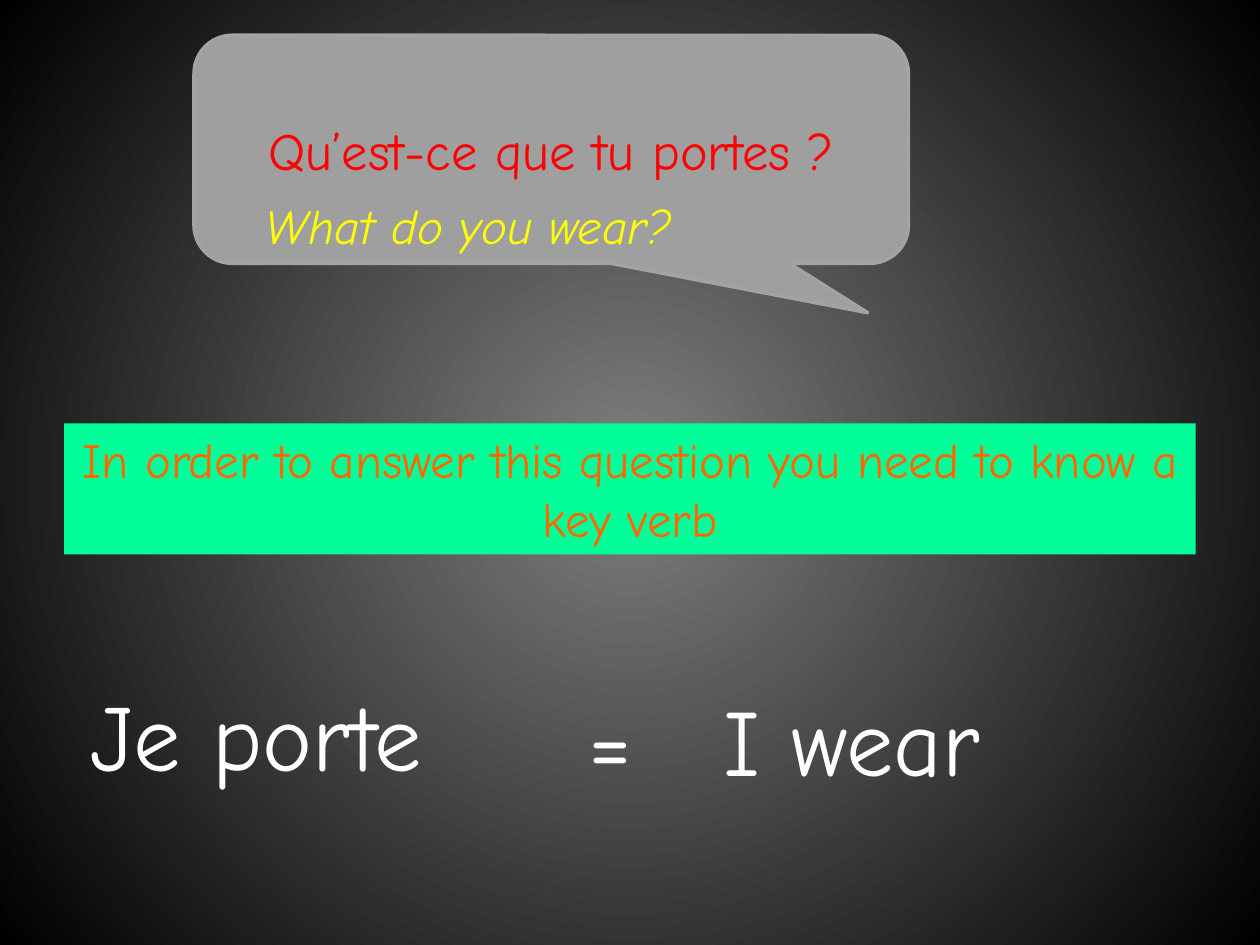
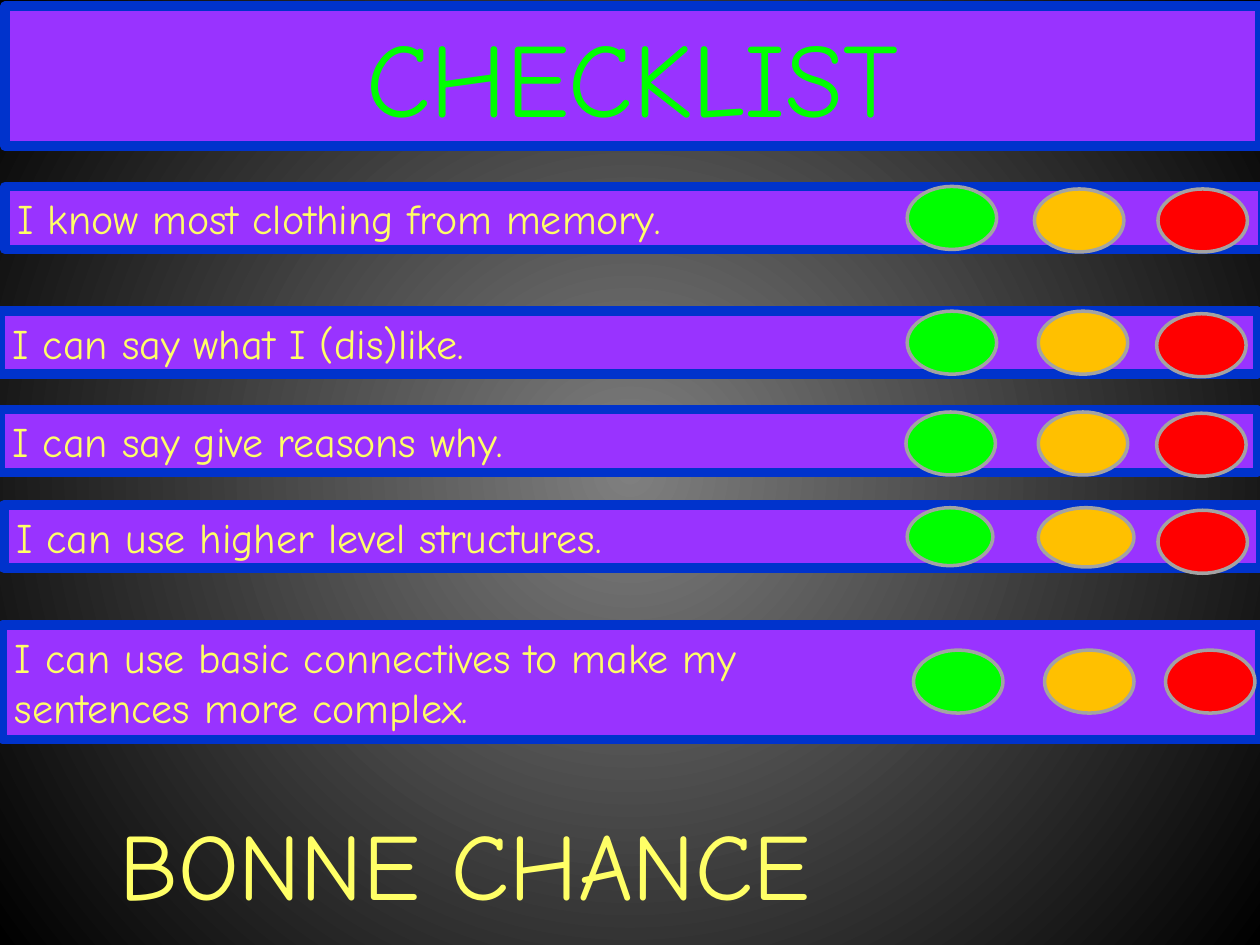
import pptx
import pptx.util
import pptx.dml.color
import pptx.enum.shapes
import pptx.enum.text
import pptx.oxml
import pptx.oxml.ns
from lxml import etree

RGB = pptx.dml.color.RGBColor
Inches = pptx.util.Inches
Pt = pptx.util.Pt
SHAPE = pptx.enum.shapes.MSO_SHAPE
ALIGN = pptx.enum.text.PP_ALIGN
ANCHOR = pptx.enum.text.MSO_ANCHOR
qn = pptx.oxml.ns.qn

FONT = "Comic Neue"
WHITE = RGB(0xFF, 0xFF, 0xFF)
BLACK = RGB(0x00, 0x00, 0x00)
GLOW = RGB(0x7F, 0x7F, 0x7F)
BUBBLE = RGB(0x9F, 0x9F, 0x9F)
OUTLINE = RGB(0xA3, 0xA3, 0xA3)
RED = RGB(0xFF, 0x00, 0x00)
AMBER = RGB(0xFF, 0xC0, 0x00)
GREEN = RGB(0x00, 0xFF, 0x00)
YELLOW = RGB(0xFF, 0xFF, 0x00)
CREAM = RGB(0xFF, 0xFF, 0x66)
ORANGE = RGB(0xFF, 0x66, 0x00)
MINT = RGB(0x00, 0xFF, 0x99)
PURPLE = RGB(0x99, 0x33, 0xFF)
BLUE = RGB(0x00, 0x33, 0xCC)

LAMP_COLORS = (GREEN, AMBER, RED)
LAMP_SIZE = (0.71, 0.5)

# Each row: box, text, lamps as (left, top[, width, height]) within the box
CHECKLIST = [
    ((0.04, 1.48, 9.98, 0.5), "I know most clothing from memory.",
     [(7.16, 0), (8.17, 0.02), (9.15, 0.02)]),
    ((0, 2.47, 9.98, 0.5), "I can say what I (dis)like.",
     [(7.2, 0), (8.24, 0), (9.18, 0.02)]),
    ((0, 3.25, 9.98, 0.5), "I can say give reasons why.",
     [(7.19, 0.02), (8.24, 0.02), (9.18, 0.03)]),
    ((0.03, 4.01, 9.98, 0.5), "I can use higher level structures.",
     [(7.17, 0.02, 0.68, 0.46), (8.21, 0.02, 0.76, 0.47), (9.16, 0.04)]),
    ((0.02, 4.96, 9.98, 0.91),
     "I can use basic connectives to make my\nsentences more complex.",
     [(7.23, 0.2), (8.27, 0.2), (9.23, 0.2)]),
]


def write(sp, text, size, color, align=ALIGN.LEFT, anchor=ANCHOR.TOP,
          italic=False, tab=None):
    """Fill a shape with text, one paragraph per line; tab is a stop in inches."""
    tf = sp.text_frame
    tf.word_wrap = True
    tf.vertical_anchor = anchor
    for i, line in enumerate(text.split("\n")):
        p = tf.add_paragraph() if i else tf.paragraphs[0]
        p.alignment = align
        if tab:
            stops = etree.SubElement(p._p.get_or_add_pPr(), qn("a:tabLst"))
            etree.SubElement(stops, qn("a:tab"), pos=str(Inches(tab)), algn="l")
        r = p.add_run()
        r.text = line
        r.font.name = FONT
        r.font.size = Pt(size)
        r.font.italic = italic
        r.font.color.rgb = color


def add_text(s, box, text, size, color, **fmt):
    sp = s.shapes.add_textbox(*map(Inches, box))
    write(sp, text, size, color, **fmt)


def add_shape(s, kind, box, fill, line=None, width=2):
    sp = s.shapes.add_shape(kind, *map(Inches, box))
    sp.shadow.inherit = False
    sp.fill.solid()
    sp.fill.fore_color.rgb = fill
    if line is None:
        sp.line.fill.background()
    else:
        sp.line.color.rgb = line
        sp.line.width = Pt(width)
    return sp


def add_slide(prs):
    """Add a blank slide with the grey glow fading to black from the centre."""
    s = prs.slides.add_slide(prs.slide_layouts[6])
    fill = s.background.fill
    fill.gradient()
    for stop, color, position in zip(fill.gradient_stops, (GLOW, BLACK), (0, 1)):
        stop.color.rgb = color
        stop.position = position
    grad = next(s.element.iter(qn("a:gradFill")))
    grad.remove(grad.find(qn("a:lin")))
    circle = etree.SubElement(grad, qn("a:path"), path="circle")
    etree.SubElement(circle, qn("a:fillToRect"),
                     dict.fromkeys("ltrb", "50000"))
    return s


def add_question(s, box):
    left, top, _, _ = box
    bubble = add_shape(s, SHAPE.ROUNDED_RECTANGULAR_CALLOUT, box, BUBBLE, OUTLINE)
    for i, value in enumerate((0.443, 0.717, 0.167)):
        bubble.adjustments[i] = value
    write(bubble, "Qu’est-ce que tu portes ?", 30, RED,
          align=ALIGN.CENTER, anchor=ANCHOR.MIDDLE)
    add_text(s, (left + 0.47, top + 1.22, 3.9, 0.57), "What do you wear?",
             28, YELLOW, italic=True)


def add_band(s, box, text, size, color, align=ALIGN.LEFT):
    band = add_shape(s, SHAPE.RECTANGLE, box, PURPLE, BLUE, 5.5)
    write(band, text, size, color, align=align)


def add_check_row(s, box, text, lamps):
    left, top, _, _ = box
    add_band(s, box, text, 24, CREAM)
    for (x, y, *size), color in zip(lamps, LAMP_COLORS):
        lamp_box = (left + x, top + y, *(size or LAMP_SIZE))
        add_shape(s, SHAPE.OVAL, lamp_box, color, OUTLINE)


def build_verb_slide(prs):
    s = add_slide(prs)
    add_question(s, (1.54, 0.28, 5.67, 1.81))
    hint = add_shape(s, SHAPE.RECTANGLE, (0.51, 3.36, 8.98, 1.04), MINT)
    write(hint, "In order to answer this question you need to know a key verb",
          28, ORANGE, align=ALIGN.CENTER)
    add_text(s, (0.62, 5.32, 3.78, 1.01), "Je porte", 54, WHITE)
    add_text(s, (4.57, 5.36, 3.78, 1.01), "=\tI wear", 54, WHITE, tab=1.07)


def build_checklist_slide(prs):
    s = add_slide(prs)
    add_band(s, (0.04, 0.05, 9.96, 1.11), "CHECKLIST", 60, GREEN, ALIGN.CENTER)
    for box, text, lamps in CHECKLIST:
        add_check_row(s, box, text, lamps)
    add_text(s, (0.85, 6.35, 6.77, 1.01), "BONNE CHANCE", 54, CREAM)


def main():
    prs = pptx.Presentation()
    prs.slide_width = Inches(10)
    prs.slide_height = Inches(7.5)
    build_verb_slide(prs)
    build_checklist_slide(prs)
    prs.save("out.pptx")


if __name__ == "__main__":
    main()
